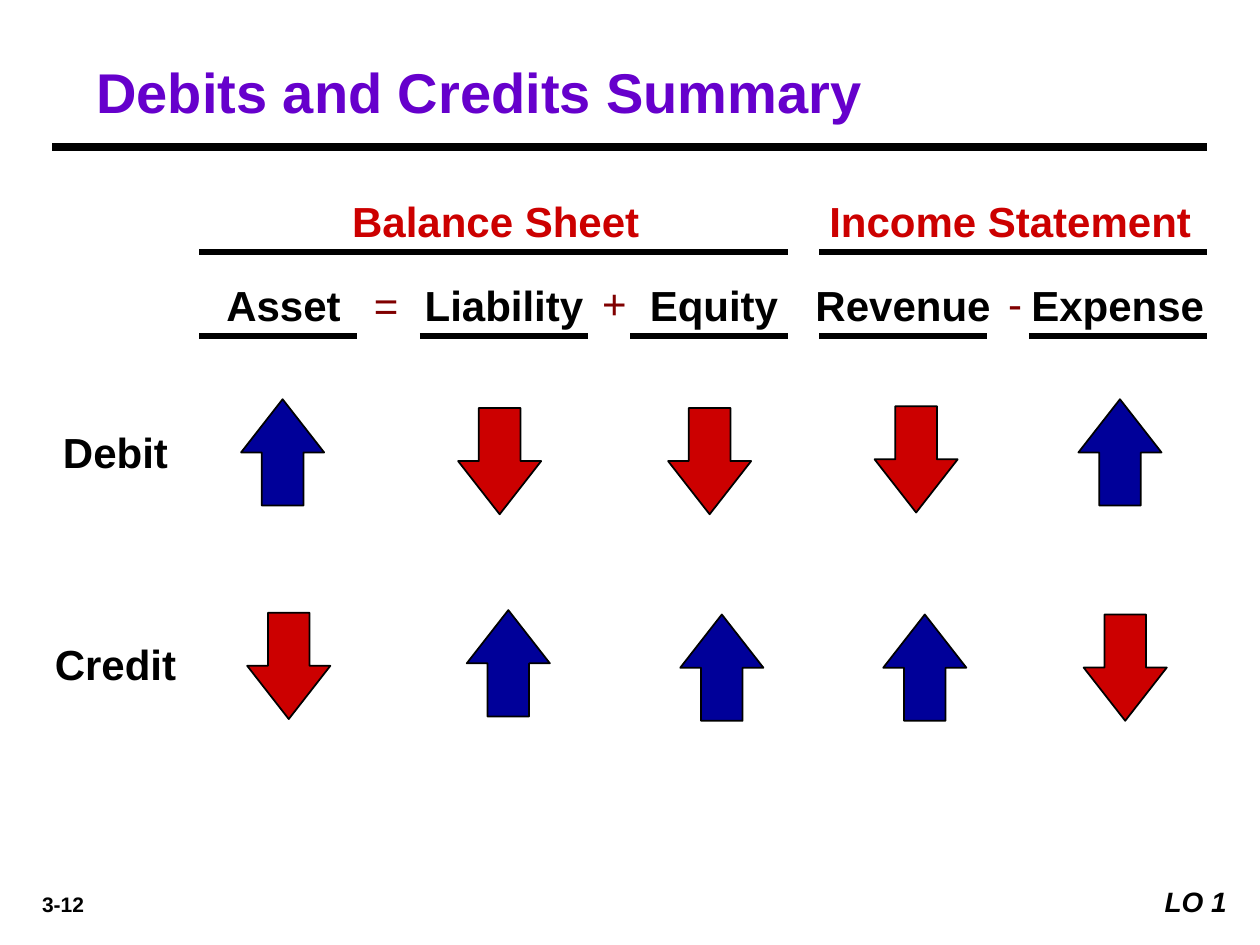
from dataclasses import dataclass
from typing import NamedTuple

from lxml import etree
from pptx import Presentation
from pptx.dml.color import RGBColor
from pptx.enum import shapes, text
from pptx.oxml import ns
from pptx.util import Pt


@dataclass(frozen=True)
class Theme:
    font: str = "Arial"
    black: str = "000000"
    white: str = "FFFFFF"
    title: str = "6600CC"
    heading: str = "CC0000"
    sign: str = "800000"
    increase: str = "000099"
    decrease: str = "CC0000"
    title_size: float = 32
    body_size: float = 24
    objective_size: float = 16
    number_size: float = 12
    rule: float = 3
    title_rule: float = 4.5


class Label(NamedTuple):
    words: str
    left: float
    top: float
    width: float
    height: float = 36
    color: str = Theme.black
    size: float = Theme.body_size
    bold: bool = True
    italic: bool = False
    align: text.PP_ALIGN = text.PP_ALIGN.CENTER
    anchor: text.MSO_ANCHOR = text.MSO_ANCHOR.TOP
    filled: bool = False


class Rule(NamedTuple):
    start: float
    end: float
    y: float
    weight: float = Theme.rule


class Arrow(NamedTuple):
    center_x: float
    center_y: float
    increase: bool


class Account(NamedTuple):
    name: str
    left: float
    width: float
    rule_start: float
    rule_end: float
    debit: Arrow
    credit: Arrow


def add_label(page, label: Label) -> None:
    area = [Pt(v) for v in (label.left, label.top, label.width, label.height)]
    if label.filled:
        box = page.shapes.add_shape(shapes.MSO_SHAPE.RECTANGLE, *area)
        box.shadow.inherit = False
        box.fill.solid()
        box.fill.fore_color.rgb = RGBColor.from_string(Theme.white)
        box.line.fill.background()
    else:
        box = page.shapes.add_textbox(*area)
    frame = box.text_frame
    frame_format = {
        "word_wrap": True,
        "vertical_anchor": label.anchor,
        "margin_left": Pt(7.2),
        "margin_right": Pt(7.2),
        "margin_top": Pt(3.6),
        "margin_bottom": Pt(3.6),
    }
    for name, value in frame_format.items():
        setattr(frame, name, value)
    para = frame.paragraphs[0]
    para.alignment = label.align
    span = para.add_run()
    span.text = label.words
    font_format = {
        "name": Theme.font,
        "size": Pt(label.size),
        "bold": label.bold,
        "italic": label.italic,
    }
    for name, value in font_format.items():
        setattr(span.font, name, value)
    span.font.color.rgb = RGBColor.from_string(label.color)


def add_rule(page, rule: Rule) -> None:
    line = page.shapes.add_connector(
        shapes.MSO_CONNECTOR.STRAIGHT,
        Pt(rule.start), Pt(rule.y), Pt(rule.end), Pt(rule.y))
    line.line.width = Pt(rule.weight)
    line.line.color.rgb = RGBColor.from_string(Theme.black)
    etree.SubElement(line.element.spPr, ns.qn("a:effectLst"))


def add_arrow(page, arrow: Arrow) -> None:
    length, thickness = 60.75, 47.5
    shape = page.shapes.add_shape(
        shapes.MSO_SHAPE.RIGHT_ARROW,
        Pt(arrow.center_x - length / 2), Pt(arrow.center_y - thickness / 2),
        Pt(length), Pt(thickness))
    shape.rotation = 270 if arrow.increase else 90
    shape.adjustments[0] = 0.5
    shape.adjustments[1] = 0.64
    shape.shadow.inherit = False
    shape.fill.solid()
    color = Theme.increase if arrow.increase else Theme.decrease
    shape.fill.fore_color.rgb = RGBColor.from_string(color)
    shape.line.color.rgb = RGBColor.from_string(Theme.black)
    shape.line.width = Pt(1)


ACCOUNTS = [
    Account("Asset", 108, 108, 114, 204,
            Arrow(161.5, 258.5, True), Arrow(165, 380.5, False)),
    Account("Liability", 234, 108, 240, 336,
            Arrow(285.5, 263.5, False), Arrow(290.5, 379, True)),
    Account("Equity", 354, 108, 360, 450,
            Arrow(405.5, 263.5, False), Arrow(412.5, 381.5, True)),
    Account("Revenue", 456, 120, 468, 564,
            Arrow(523.5, 262.5, False), Arrow(528.5, 381.5, True)),
    # The trailing space sets the centred word a little to the left
    Account("Expense ", 582, 120, 588, 690,
            Arrow(640, 258.5, True), Arrow(643, 381.5, False)),
]

LABELS = [
    # Title and statement headings
    Label("Debits and Credits Summary", 48, 30, 648, 44, Theme.title,
          Theme.title_size, align=text.PP_ALIGN.LEFT,
          anchor=text.MSO_ANCHOR.MIDDLE),
    Label("Balance Sheet", 152.5, 108, 261.5, color=Theme.heading),
    Label("Income Statement", 446.5, 108, 261.5, color=Theme.heading),
    # Row names
    Label("Debit", 12, 240, 108),
    Label("Credit", 12, 361.5, 108),
    # Footer
    Label("3-12", 6, 506, 60, 22, size=Theme.number_size),
    Label("LO 1", 648, 502, 60, 26.5, size=Theme.objective_size, italic=True,
          align=text.PP_ALIGN.RIGHT, filled=True),
]

# Signs of the accounting equation: words, left, top, width
SIGNS = [("=", 206.5, 156, 34.5), ("+", 337, 155, 34.5), ("-", 569, 155, 31)]

RULES = [
    Rule(30, 690, 84, Theme.title_rule),
    Rule(114, 450, 144),
    Rule(468, 690, 144),
]


def main() -> None:
    deck = Presentation()
    deck.slide_width, deck.slide_height = Pt(720), Pt(540)
    page = deck.slides.add_slide(deck.slide_layouts[6])

    for label in LABELS:
        add_label(page, label)
    for rule in RULES:
        add_rule(page, rule)
    for words, left, top, width in SIGNS:
        add_label(page, Label(words, left, top, width, color=Theme.sign,
                              bold=False, align=text.PP_ALIGN.LEFT))

    # Account columns: name, underline and the two effects
    for account in ACCOUNTS:
        add_label(page, Label(account.name, account.left, 156, account.width))
        add_rule(page, Rule(account.rule_start, account.rule_end, 192))
        add_arrow(page, account.debit)
        add_arrow(page, account.credit)

    deck.save("out.pptx")


if __name__ == "__main__":
    main()
